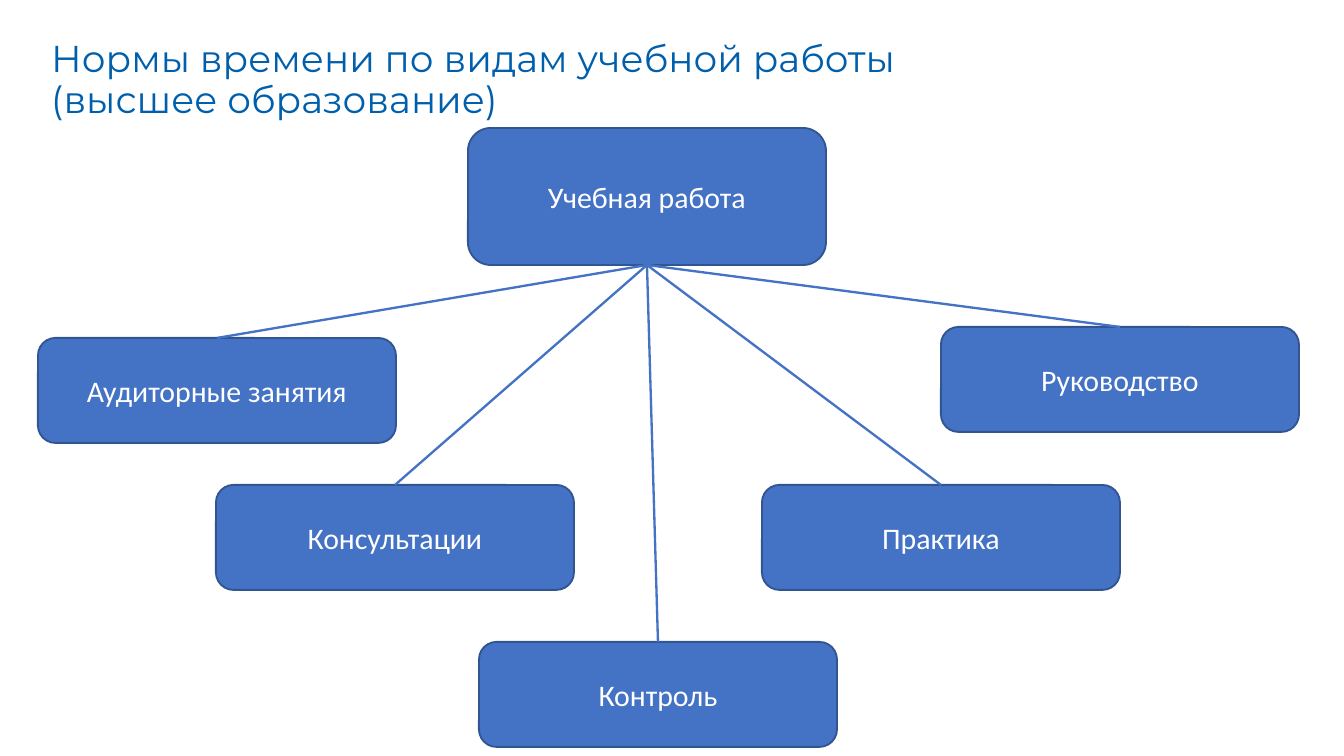
import pptx
import pptx.util
import pptx.dml.color
import pptx.enum.shapes
import pptx.enum.text
import lxml.etree
from pptx.oxml.ns import qn

TITLE = "Нормы времени по видам учебной работы\v(высшее образование)"
ROOT = ("Учебная работа", 468, 128)
KINDS = [
    ("Аудиторные занятия", 38, 338),
    ("Консультации", 216, 485),
    ("Контроль", 479, 642),
    ("Практика", 762, 485),
    ("Руководство", 941, 327),
]
WIDE, ROOT_TALL, KIND_TALL = 358, 137, 105
COLORS = {"title": "005FAC", "fill": "4472C4", "edge": "325491", "text": "FFFFFF"}

Pt = pptx.util.Pt
ALIGN = pptx.enum.text.PP_ALIGN
ANCHOR = pptx.enum.text.MSO_ANCHOR


def px(count):
    return round(count * 914400 / 134.4)


def rgb(name):
    return pptx.dml.color.RGBColor.from_string(COLORS[name])


def write(shape, text, font, size, color, align, anchor):
    frame = shape.text_frame
    frame.word_wrap = True
    frame.vertical_anchor = anchor
    para = frame.paragraphs[0]
    para.text = text
    para.alignment = align
    para.font.name = font
    para.font.size = Pt(size)
    para.font.color.rgb = rgb(color)
    return para


def add_box(text, left, top, tall):
    box = slide.shapes.add_shape(
        pptx.enum.shapes.MSO_SHAPE.ROUNDED_RECTANGLE,
        px(left), px(top), px(WIDE), px(tall))
    box.shadow.inherit = False
    box.fill.solid()
    box.fill.fore_color.rgb = rgb("fill")
    box.line.color.rgb = rgb("edge")
    box.line.width = Pt(1)
    write(box, text, "Calibri", 16, "text", ALIGN.CENTER, ANCHOR.MIDDLE)
    return box


def link(start, end):
    """Join the bottom of one box to the top of another."""
    line = slide.shapes.add_connector(
        pptx.enum.shapes.MSO_CONNECTOR.STRAIGHT, 0, 0, 0, 0)
    line.begin_connect(start, 2)
    line.end_connect(end, 0)
    line.line.color.rgb = rgb("fill")
    line.line.width = Pt(1.25)
    lxml.etree.SubElement(line._element.spPr, qn("a:effectLst"))


deck = pptx.Presentation()
deck.slide_width, deck.slide_height = px(1344), px(756)
slide = deck.slides.add_slide(deck.slide_layouts[6])

title = slide.shapes.add_textbox(px(38), px(19), px(1023), px(109))
para = write(title, TITLE, "Montserrat", 20, "title", ALIGN.LEFT, ANCHOR.BOTTOM)
para.line_spacing = 0.9

root = add_box(*ROOT, ROOT_TALL)
boxes = [add_box(*kind, KIND_TALL) for kind in KINDS]
for box in boxes:
    link(root, box)

deck.save("out.pptx")
